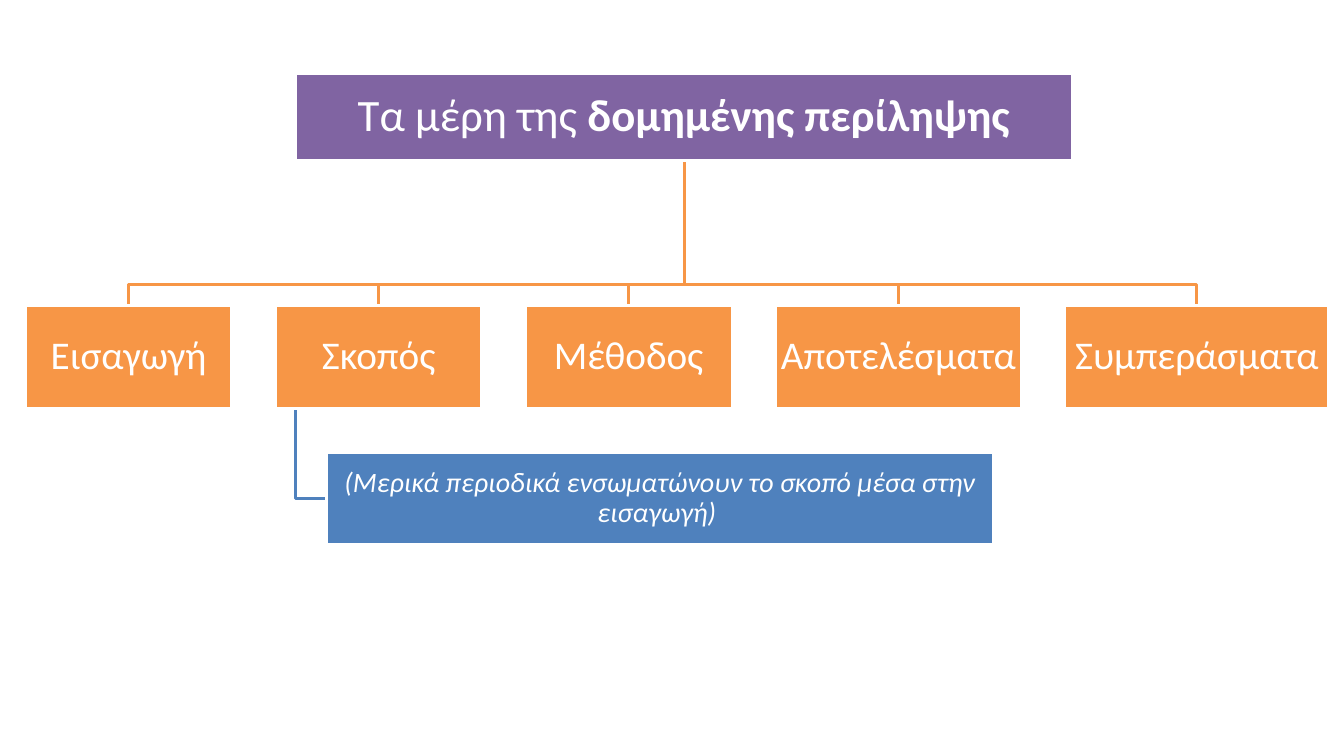
from dataclasses import dataclass

from pptx import Presentation
from pptx.dml.color import RGBColor
from pptx.enum.shapes import MSO_SHAPE as Preset
from pptx.enum.text import MSO_ANCHOR as Anchor, MSO_AUTO_SIZE as AutoSize, PP_ALIGN as Align
from pptx.shapes.autoshape import Shape
from pptx.slide import Slide
from pptx.util import Inches, Pt

COLORS = {"title": "8064A2", "part": "F79646", "note": "4F81BD", "white": "FFFFFF"}
FONT = "Calibri"
LINE_WIDTH = Pt(2)
PART_TOP, PART_HEIGHT, PART_GAP, FIRST_LEFT = 3.03, 1.02, 0.43, 0.25
BRANCH_Y = 2.82


@dataclass
class TextRun:
    text: str
    bold: bool = False
    italic: bool = False


@dataclass
class Box:
    left: float
    top: float
    width: float
    height: float
    color: str
    size: int
    runs: list[TextRun]
    inset: float = 0.02

    @property
    def center(self) -> float:
        return self.left + self.width / 2

    @property
    def bottom(self) -> float:
        return self.top + self.height


def color_of(name: str) -> RGBColor:
    return RGBColor.from_string(COLORS[name])


def format_box(shape: Shape, box: Box) -> None:
    shape.left, shape.top = Inches(box.left), Inches(box.top)
    shape.width, shape.height = Inches(box.width), Inches(box.height)
    shape.shadow.inherit = False
    shape.fill.solid()
    shape.fill.fore_color.rgb = color_of(box.color)
    shape.line.color.rgb = color_of("white")
    shape.line.width = LINE_WIDTH
    frame = shape.text_frame
    frame.word_wrap = True
    frame.auto_size = AutoSize.NONE
    frame.vertical_anchor = Anchor.MIDDLE
    frame.margin_left = frame.margin_right = Inches(box.inset)
    frame.margin_top = frame.margin_bottom = Inches(box.inset)
    paragraph = frame.paragraphs[0]
    paragraph.alignment = Align.CENTER
    paragraph.line_spacing = 0.9
    for text_run in box.runs:
        run = paragraph.add_run()
        run.text = text_run.text
        run.font.name = FONT
        run.font.size = Pt(box.size)
        run.font.bold = text_run.bold
        run.font.italic = text_run.italic
        run.font.color.rgb = color_of("white")


def add_box(slide: Slide, box: Box) -> None:
    shape = slide.shapes.add_shape(
        Preset.RECTANGLE, Inches(box.left), Inches(box.top), Inches(box.width), Inches(box.height)
    )
    format_box(shape, box)


def add_branch(slide: Slide, points: list[tuple[float, float]], color: str) -> None:
    """Draw an open angled line through points given in inches."""
    start, *corners = [(Inches(x), Inches(y)) for x, y in points]
    builder = slide.shapes.build_freeform(*start)
    builder.add_line_segments(corners, close=False)
    shape = builder.convert_to_shape()
    shape.shadow.inherit = False
    shape.fill.background()
    shape.line.color.rgb = color_of(color)
    shape.line.width = LINE_WIDTH


def make_parts() -> list[Box]:
    """Lay the parts out in a row with equal gaps."""
    widths = {
        "Εισαγωγή": 2.05,
        "Σκοπός": 2.05,
        "Μέθοδος": 2.05,
        "Αποτελέσματα": 2.44,
        "Συμπεράσματα": 2.62,
    }
    parts: list[Box] = []
    left = FIRST_LEFT
    for text, width in widths.items():
        parts.append(Box(left, PART_TOP, width, PART_HEIGHT, "part", 28, [TextRun(text)]))
        left += width + PART_GAP
    return parts


def main() -> None:
    presentation = Presentation()
    presentation.slide_width, presentation.slide_height = Inches(13.33), Inches(7.5)
    slide = presentation.slides.add_slide(presentation.slide_layouts.get_by_name("Title Only"))

    title_runs = [TextRun("Τα μέρη της "), TextRun("δομημένης περίληψης", bold=True)]
    title_box = Box(2.93, 0.73, 7.71, 0.86, "title", 32, title_runs)
    parts = make_parts()
    purpose = parts[1]
    note_text = "(Μερικά περιοδικά ενσωματώνουν το σκοπό μέσα στην εισαγωγή) "
    note = Box(3.24, 4.49, 6.61, 0.91, "note", 20, [TextRun(note_text, italic=True)], 0.01)

    for part in parts:
        trunk = [(title_box.center, title_box.bottom), (title_box.center, BRANCH_Y)]
        add_branch(slide, trunk + [(part.center, BRANCH_Y), (part.center, part.top)], "part")
    stem_x = purpose.left + 0.2
    note_middle = note.top + note.height / 2
    add_branch(
        slide, [(stem_x, purpose.bottom), (stem_x, note_middle), (note.left, note_middle)], "note"
    )

    title = slide.shapes.title
    format_box(title, title_box)
    title.element.getparent().append(title.element)  # in front of the branches
    for box in [*parts, note]:
        add_box(slide, box)

    presentation.save("out.pptx")


if __name__ == "__main__":
    main()
